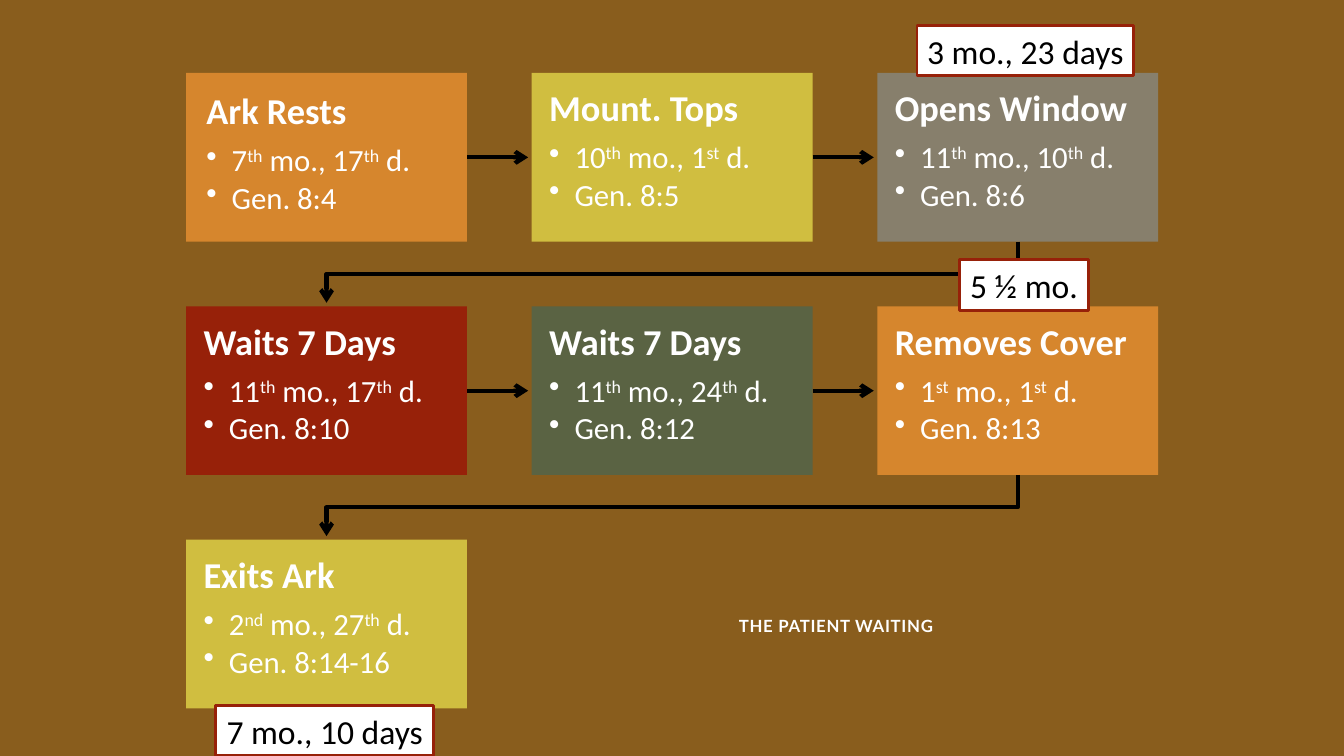
from dataclasses import dataclass
from itertools import pairwise

from lxml.etree import SubElement
from pptx import Presentation
from pptx.dml.color import RGBColor
from pptx.enum.shapes import MSO_CONNECTOR, MSO_SHAPE
from pptx.enum.text import MSO_ANCHOR, MSO_AUTO_SIZE, PP_ALIGN
from pptx.oxml.ns import qn
from pptx.shapes.autoshape import Shape
from pptx.slide import Slide
from pptx.text.text import _Paragraph
from pptx.util import Cm, Pt


@dataclass(frozen=True)
class Theme:
    """Colours, fonts and type sizes of the slide."""
    background: str = "895D1D"
    orange: str = "D6862D"
    yellow: str = "D0BE40"
    grey: str = "877F6C"
    red: str = "972109"
    green: str = "5A6343"
    white: str = "FFFFFF"
    black: str = "000000"
    title: str = "FEFEFE"
    title_outline: str = "9FA984"
    body_font: str = "Calibri"
    title_font: str = "Lato"
    heading_size: float = 26
    bullet_size: float = 22
    duration_size: float = 24
    title_size: float = 12
    arrow_width: float = 3
    border_width: float = 2.08


@dataclass(frozen=True)
class Event:
    """One step of the flood timeline; ^ encloses superscripts."""
    heading: str
    date: str
    verse: str
    fill: str
    inset: float = 0.44


@dataclass(frozen=True)
class Duration:
    """A label giving elapsed time, placed in centimetres."""
    text: str
    left: float
    top: float
    width: float


THEME = Theme()
COLUMNS = 3
CARD_LEFT, CARD_TOP = 4.69, 1.84
CARD_WIDTH, CARD_HEIGHT = 7.08, 4.25
COLUMN_PITCH, ROW_PITCH = 8.71, 5.88
ARROW_GAP = 0.09
DURATION_HEIGHT = 1.27

EVENTS = [
    Event("Ark Rests", "7^th^ mo., 17^th^ d.", "Gen. 8:4", THEME.orange, 0.51),
    Event("Mount. Tops", "10^th^ mo., 1^st^ d.", "Gen. 8:5", THEME.yellow),
    Event("Opens Window", "11^th^ mo., 10^th^ d.", "Gen. 8:6", THEME.grey),
    Event("Waits 7 Days", "11^th^ mo., 17^th^ d.", "Gen. 8:10", THEME.red),
    Event("Waits 7 Days", "11^th^ mo., 24^th^ d.", "Gen. 8:12", THEME.green),
    Event("Removes Cover", "1^st^ mo., 1^st^ d.", "Gen. 8:13", THEME.orange),
    Event("Exits Ark", "2^nd^ mo., 27^th^ d.", "Gen. 8:14-16", THEME.yellow),
]
DURATIONS = [
    Duration("3 mo., 23 days", 23.11, 0.64, 5.46),
    Duration("5 ½ mo.", 24.18, 6.55, 3.25),
    Duration("7 mo., 10 days", 5.44, 17.78, 5.49),
]


def rgb(colour: str) -> RGBColor:
    """Turn a hex string into a colour."""
    return RGBColor.from_string(colour)


def style(paragraph: _Paragraph, size: float, colour: str, bold: bool = False,
          font_name: str = THEME.body_font) -> None:
    """Set the font shared by all runs of a paragraph."""
    font = paragraph.font
    font.name, font.size, font.bold = font_name, Pt(size), bold
    font.color.rgb = rgb(colour)


def add_rectangle(slide: Slide, left: float, top: float, width: float,
                  height: float, fill: str) -> Shape:
    """Add a plain filled rectangle without border."""
    rectangle = slide.shapes.add_shape(
        MSO_SHAPE.RECTANGLE, Cm(left), Cm(top), Cm(width), Cm(height))
    rectangle.shadow.inherit = False
    rectangle.fill.solid()
    rectangle.fill.fore_color.rgb = rgb(fill)
    rectangle.line.fill.background()
    return rectangle


def add_bullet(paragraph: _Paragraph, text: str) -> None:
    """Fill a bulleted paragraph, raising the parts between ^ marks."""
    paragraph.level = 1
    properties = paragraph._p.get_or_add_pPr()
    properties.set("marL", str(Cm(0.64)))
    properties.set("indent", str(-Cm(0.64)))
    SubElement(properties, qn("a:buChar")).set("char", "•")
    for index, part in enumerate(text.split("^")):
        run = paragraph.add_run()
        run.text = part
        if index % 2:
            run._r.get_or_add_rPr().set("baseline", "30000")
    style(paragraph, THEME.bullet_size, THEME.white)
    paragraph.space_after = Pt(3)


def add_card(slide: Slide, event: Event, index: int) -> Shape:
    """Add the card of an event at its place in the grid."""
    row, column = divmod(index, COLUMNS)
    card = add_rectangle(slide, CARD_LEFT + column * COLUMN_PITCH,
                         CARD_TOP + row * ROW_PITCH, CARD_WIDTH, CARD_HEIGHT, event.fill)
    frame = card.text_frame
    frame.word_wrap = True
    frame.vertical_anchor = MSO_ANCHOR.TOP
    frame.margin_left = frame.margin_right = Cm(event.inset)
    frame.margin_top = frame.margin_bottom = Cm(event.inset)
    heading = frame.paragraphs[0]
    heading.text = event.heading
    style(heading, THEME.heading_size, THEME.white, bold=True)
    heading.space_after = Pt(9)
    for text in (event.date, event.verse):
        add_bullet(frame.add_paragraph(), text)
    for paragraph in frame.paragraphs:
        paragraph.alignment = PP_ALIGN.LEFT
        paragraph.line_spacing = 0.9
    return card


def add_arrow(slide: Slide, start: Shape, end: Shape) -> None:
    """Lead from one card to the next, bending where a row ends."""
    if start.top == end.top:
        middle = start.top + start.height // 2
        arrow = slide.shapes.add_connector(
            MSO_CONNECTOR.STRAIGHT, start.left + start.width, middle,
            end.left - Cm(ARROW_GAP), middle)
        arrow.begin_connect(start, 3)
        SubElement(arrow._element.spPr, qn("a:effectLst"))
    else:
        start_x = start.left + start.width // 2
        end_x = end.left + end.width // 2
        bottom = start.top + start.height
        bend = (bottom + end.top) // 2
        outline = slide.shapes.build_freeform(start_x, bottom)
        outline.add_line_segments(
            [(start_x, bend), (end_x, bend), (end_x, end.top - Cm(ARROW_GAP))], close=False)
        arrow = outline.convert_to_shape()
        arrow.shadow.inherit = False
        arrow.fill.background()
    arrow.line.color.rgb = rgb(THEME.black)
    arrow.line.width = Pt(THEME.arrow_width)
    SubElement(arrow.line._get_or_add_ln(), qn("a:tailEnd")).set("type", "arrow")


def add_duration(slide: Slide, duration: Duration) -> None:
    """Add a bordered label with an elapsed time."""
    label = add_rectangle(slide, duration.left, duration.top, duration.width,
                          DURATION_HEIGHT, THEME.white)
    label.line.color.rgb = rgb(THEME.red)
    label.line.width = Pt(THEME.border_width)
    frame = label.text_frame
    frame.word_wrap = False
    frame.auto_size = MSO_AUTO_SIZE.SHAPE_TO_FIT_TEXT
    paragraph = frame.paragraphs[0]
    paragraph.text = duration.text
    paragraph.alignment = PP_ALIGN.CENTER
    style(paragraph, THEME.duration_size, THEME.black)


def add_title(slide: Slide) -> None:
    """Add the outlined title in the free corner."""
    frame = slide.shapes.add_textbox(Cm(13.77), Cm(13.97), Cm(14.6), Cm(3.61)).text_frame
    frame.word_wrap = True
    frame.vertical_anchor = MSO_ANCHOR.MIDDLE
    title = frame.paragraphs[0]
    title.text = "THE PATIENT WAITING"
    title.alignment = PP_ALIGN.CENTER
    style(title, THEME.title_size, THEME.title, True, THEME.title_font)
    properties = title.runs[0]._r.get_or_add_rPr()
    properties.set("spc", "50")
    outline = SubElement(properties, qn("a:ln"), w=str(Pt(1)))
    SubElement(SubElement(outline, qn("a:solidFill")), qn("a:srgbClr"), val=THEME.title_outline)


def main() -> None:
    """Build and save the timeline slide."""
    presentation = Presentation()
    presentation.slide_width, presentation.slide_height = Cm(33.87), Cm(19.05)
    slide = presentation.slides.add_slide(presentation.slide_layouts[6])
    slide.background.fill.solid()
    slide.background.fill.fore_color.rgb = rgb(THEME.background)
    add_title(slide)
    cards = [add_card(slide, event, index) for index, event in enumerate(EVENTS)]
    for start, end in pairwise(cards):
        add_arrow(slide, start, end)
    for duration in DURATIONS:
        add_duration(slide, duration)
    presentation.save("out.pptx")


if __name__ == "__main__":
    main()
